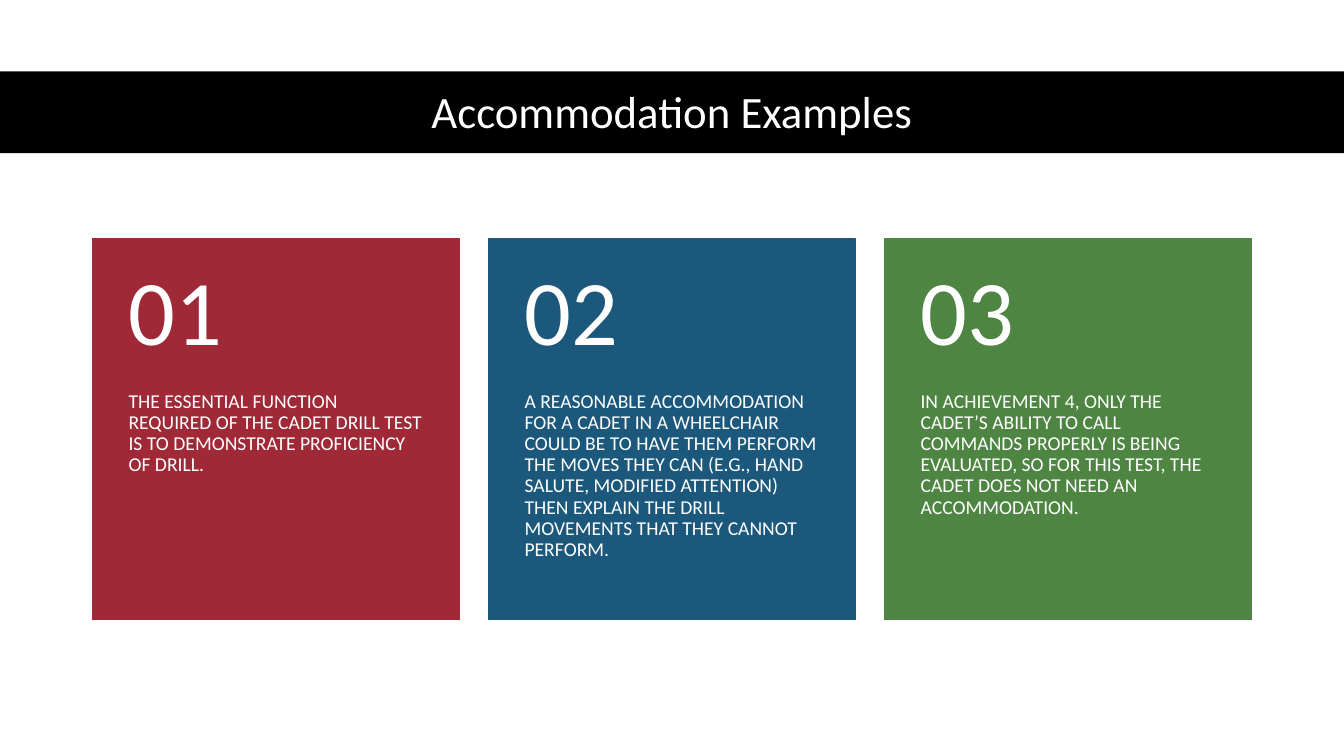
from pptx import Presentation
from pptx.dml.color import RGBColor
from pptx.enum.shapes import MSO_SHAPE
from pptx.enum.text import MSO_ANCHOR, MSO_AUTO_SIZE, PP_ALIGN
from pptx.util import Cm, Pt

WHITE = "FFFFFF"
BLACK = "000000"
LEFT, TOP, WIDTH, STEP = 2.33, 6.02, 9.25, 9.98
HEAD, BODY = 3.84, 5.76
CARDS = [
    ("9F2936", "THE ESSENTIAL FUNCTION REQUIRED OF THE CADET DRILL TEST IS TO "
               "DEMONSTRATE PROFICIENCY OF DRILL."),
    ("1B587C", "A REASONABLE ACCOMMODATION FOR A CADET IN A WHEELCHAIR COULD BE TO "
               "HAVE THEM PERFORM THE MOVES THEY CAN (E.G., HAND SALUTE, MODIFIED "
               "ATTENTION) THEN EXPLAIN THE DRILL MOVEMENTS THAT THEY CANNOT PERFORM."),
    ("4E8542", "IN ACHIEVEMENT 4, ONLY THE CADET’S ABILITY TO CALL COMMANDS PROPERLY "
               "IS BEING EVALUATED, SO FOR THIS TEST, THE CADET DOES NOT NEED AN "
               "ACCOMMODATION."),
]


def color(code):
    return RGBColor.from_string(code)


def add_rect(shapes, box, fill, edge=False):
    rect = shapes.add_shape(MSO_SHAPE.RECTANGLE, *map(Cm, box))
    rect.shadow.inherit = False
    rect.fill.solid()
    rect.fill.fore_color.rgb = color(fill)
    if edge:
        rect.line.color.rgb = color(fill)
        rect.line.width = Pt(1)
    else:
        rect.line.fill.background()
    return rect


def set_text(shape, text, size, anchor, align):
    frame = shape.text_frame
    frame.text = text
    frame.word_wrap = True
    frame.auto_size = MSO_AUTO_SIZE.NONE
    frame.vertical_anchor = anchor
    para = frame.paragraphs[0]
    para.alignment = align
    para.line_spacing = 0.9
    font = para.runs[0].font
    font.name = "Calibri"
    font.size = Pt(size)
    font.color.rgb = color(WHITE)


def add_text(shapes, box, text, size, anchor, above, below):
    label = shapes.add_textbox(*map(Cm, box))
    set_text(label, text, size, anchor, PP_ALIGN.LEFT)
    frame = label.text_frame
    frame.margin_left = frame.margin_right = Cm(0.91)
    frame.margin_top, frame.margin_bottom = Cm(above), Cm(below)


def add_card(slide, index, fill, text):
    shapes = slide.shapes.add_group_shape().shapes
    left = LEFT + index * STEP
    add_rect(shapes, (left, TOP, WIDTH, HEAD + BODY), fill, edge=True)
    add_text(shapes, (left, TOP + HEAD, WIDTH, BODY), text, 14,
             MSO_ANCHOR.TOP, 0, 0.91)
    add_text(shapes, (left, TOP, WIDTH, HEAD), f"{index + 1:02}", 66,
             MSO_ANCHOR.MIDDLE, 0.46, 0.46)


def add_title(slide, text):
    band = add_rect(slide.shapes, (0, 1.8, 33.87, 2.06), BLACK)
    title = slide.shapes.title
    title.element.addprevious(band.element)
    title.left, title.top = Cm(LEFT), Cm(1.88)
    title.width, title.height = Cm(29.21), Cm(1.98)
    set_text(title, text, 32, MSO_ANCHOR.MIDDLE, PP_ALIGN.CENTER)


def main():
    """Build the slide with a title band and three numbered cards."""
    deck = Presentation()
    deck.slide_width, deck.slide_height = Cm(33.87), Cm(19.05)
    slide = deck.slides.add_slide(deck.slide_layouts[5])
    add_title(slide, "Accommodation Examples")
    for index, (fill, text) in enumerate(CARDS):
        add_card(slide, index, fill, text)
    deck.save("out.pptx")


if __name__ == "__main__":
    main()
